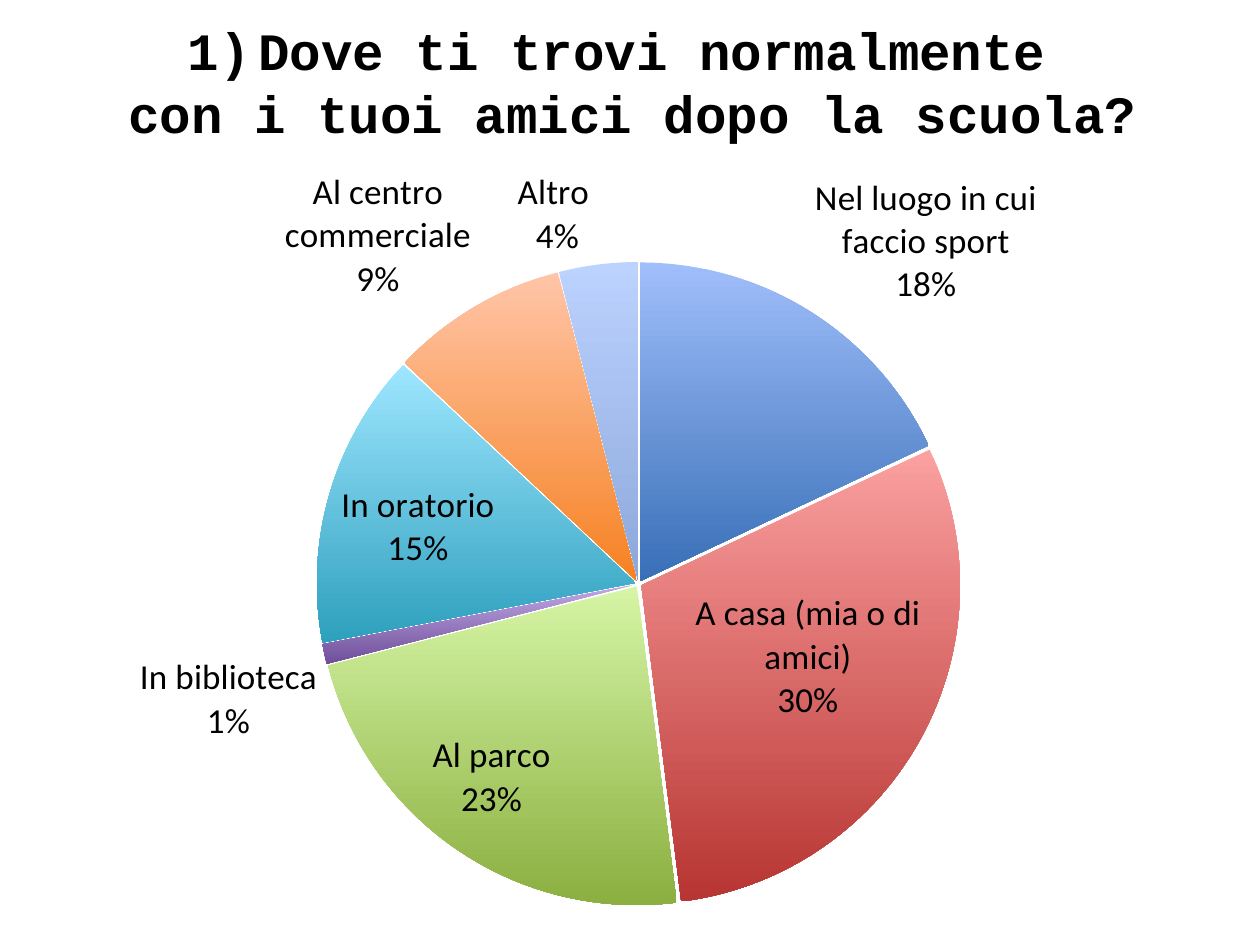
import pptx
import pptx.chart.data
import pptx.dml.color
import pptx.enum.chart
import pptx.enum.text
import pptx.oxml
import pptx.oxml.ns
import pptx.util

Inches = pptx.util.Inches
Pt = pptx.util.Pt
RGBColor = pptx.dml.color.RGBColor

BLACK = RGBColor(0x00, 0x00, 0x00)
CHART_NS = pptx.oxml.ns.nsdecls("c")
DRAWING_NS = pptx.oxml.ns.nsdecls("a")

TITLE_LINES = ["Dove ti trovi normalmente ", "con i tuoi amici dopo la scuola?"]

# Answer, percentage, colour at the top and at the bottom of the slice
ANSWERS = [
    ("Nel luogo in cui faccio sport", 18, RGBColor(0xA0, 0xBE, 0xFA), RGBColor(0x38, 0x6F, 0xB7)),
    ("A casa (mia o di amici)", 30, RGBColor(0xFB, 0xA0, 0xA0), RGBColor(0xB7, 0x35, 0x32)),
    ("Al parco", 23, RGBColor(0xD5, 0xF5, 0xA5), RGBColor(0x8B, 0xAF, 0x40)),
    ("In biblioteca", 1, RGBColor(0xC0, 0xA8, 0xE5), RGBColor(0x6F, 0x4F, 0x9A)),
    ("In oratorio", 15, RGBColor(0x9E, 0xE6, 0xFF), RGBColor(0x2E, 0xA0, 0xBD)),
    ("Al centro commerciale", 9, RGBColor(0xFF, 0xC5, 0xA8), RGBColor(0xF6, 0x82, 0x22)),
    ("Altro ", 4, RGBColor(0xBC, 0xD2, 0xFF), RGBColor(0x8C, 0xA8, 0xDA)),
]


def place_title(page, left, top, width, height):
    title = page.shapes.title
    title.left, title.top, title.width, title.height = left, top, width, height
    frame = title.text_frame
    frame.text = "\n".join(TITLE_LINES)
    frame.word_wrap = True
    frame.vertical_anchor = pptx.enum.text.MSO_ANCHOR.TOP
    frame.auto_size = pptx.enum.text.MSO_AUTO_SIZE.SHAPE_TO_FIT_TEXT

    # Only the first line carries the question number
    properties = frame.paragraphs[0]._p.get_or_add_pPr()
    properties.set("marL", str(Inches(0.56)))
    properties.set("indent", str(-Inches(0.56)))
    properties.append(pptx.oxml.parse_xml(
        f'<a:buAutoNum {DRAWING_NS} type="arabicParenR"/>'))

    for para in frame.paragraphs:
        para.alignment = pptx.enum.text.PP_ALIGN.CENTER
        para.font.name = "Courier New"
        para.font.size = Pt(30)
        para.font.bold = True
        para.font.color.rgb = BLACK


def set_plot_area(chart, x, y, width, height):
    plot_area = chart._chartSpace.chart.plotArea
    for layout in plot_area.findall(pptx.oxml.ns.qn("c:layout")):
        plot_area.remove(layout)
    plot_area.insert(0, pptx.oxml.parse_xml(
        f'<c:layout {CHART_NS}><c:manualLayout><c:layoutTarget val="inner"/>'
        '<c:xMode val="edge"/><c:yMode val="edge"/>'
        f'<c:x val="{x}"/><c:y val="{y}"/><c:w val="{width}"/><c:h val="{height}"/>'
        '</c:manualLayout></c:layout>'))


def place_answers_pie(page, left, top, width, height):
    chart_data = pptx.chart.data.CategoryChartData()
    chart_data.categories = [answer[0] for answer in ANSWERS]
    chart_data.add_series("Series 1", [answer[1] for answer in ANSWERS])
    chart = page.shapes.add_chart(
        pptx.enum.chart.XL_CHART_TYPE.PIE, left, top, width, height, chart_data).chart
    chart.has_title = False
    chart.has_legend = False
    chart.font.name = "Calibri"
    chart.font.size = Pt(10)
    chart.font.color.rgb = BLACK
    set_plot_area(chart, 0.2, 0.13, 0.61, 0.82)

    # Slices shaded from top to bottom
    plot = chart.plots[0]
    plot.vary_by_categories = True
    series = plot.series[0]
    for index, (_, _, top_color, bottom_color) in enumerate(ANSWERS):
        fill = series.points[index].format.fill
        fill.gradient()
        fill.gradient_angle = 270
        for stop, color, position in zip(
                fill.gradient_stops, (top_color, bottom_color), (0, 1)):
            stop.color.rgb = color
            stop.position = position

    # Slight gap between slices
    first_point = series._element.find(pptx.oxml.ns.qn("c:dPt"))
    first_point.addprevious(pptx.oxml.parse_xml(f'<c:explosion {CHART_NS} val="1"/>'))

    # Answer and percentage on each slice
    labels = series.data_labels
    labels.show_category_name = True
    labels.show_percentage = True
    labels.show_value = False
    labels.position = pptx.enum.chart.XL_LABEL_POSITION.BEST_FIT
    labels.font.name = "Calibri"
    labels.font.size = Pt(20)
    labels.font.color.rgb = BLACK


def main():
    deck = pptx.Presentation()
    deck.slide_width, deck.slide_height = Inches(10), Inches(7.5)
    page = deck.slides.add_slide(deck.slide_layouts.get_by_name("Title Only"))
    place_answers_pie(page, Inches(0.61), Inches(1.27), Inches(8.83), Inches(6.23))
    place_title(page, Inches(0.34), Inches(0.09), Inches(9.36), Inches(1.11))
    deck.save("out.pptx")


if __name__ == "__main__":
    main()
